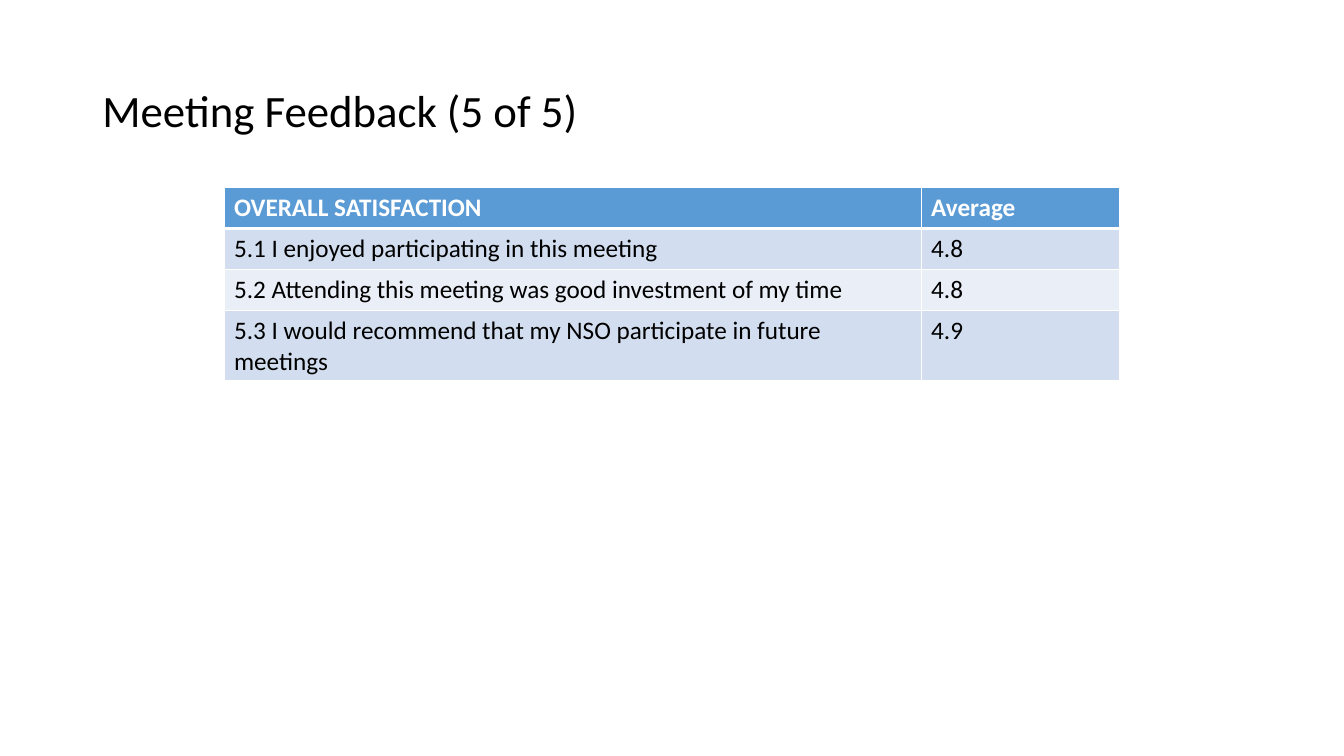
from dataclasses import dataclass

from lxml.etree import SubElement
from pptx import Presentation
from pptx.dml.color import RGBColor
from pptx.enum.text import MSO_ANCHOR
from pptx.oxml.ns import qn
from pptx.util import Pt

BLACK = RGBColor(0x00, 0x00, 0x00)
WHITE = RGBColor(0xFF, 0xFF, 0xFF)
BLUE = RGBColor(0x5B, 0x9B, 0xD5)
MIST = RGBColor(0xD2, 0xDE, 0xEF)
PALE = RGBColor(0xEA, 0xEF, 0xF7)
FONT = "Calibri"
WIDTHS = (498, 142)


@dataclass
class Row:
    topic: str
    score: str
    fill: RGBColor
    high: float = 29.2
    ink: RGBColor = BLACK
    bold: bool = False
    top: float = 1
    base: float = 1


ROWS = [
    Row("OVERALL SATISFACTION", "Average", BLUE, ink=WHITE, bold=True, base=3),
    Row("5.1 I enjoyed participating in this meeting", "4.8", MIST, top=3),
    Row("5.2 Attending this meeting was good investment of my time", "4.8", PALE),
    Row("5.3 I would recommend that my NSO participate in future meetings",
        "4.9", MIST, high=50.4),
]


def add_text(para, text: str, size: float, ink: RGBColor, bold: bool = False) -> None:
    run = para.add_run()
    run.text = text
    font = run.font
    font.name, font.size, font.bold = FONT, Pt(size), bold
    font.color.rgb = ink


def add_edge(cell, side: str, width: float) -> None:
    line = SubElement(cell._tc.get_or_add_tcPr(), qn(f"a:ln{side}"), w=str(Pt(width)))
    fill = SubElement(line, qn("a:solidFill"))
    SubElement(fill, qn("a:srgbClr"), val=str(WHITE))


def draw_cell(cell, text: str, row: Row) -> None:
    for side, width in (("L", 1), ("R", 1), ("T", row.top), ("B", row.base)):
        add_edge(cell, side, width)
    cell.fill.solid()
    cell.fill.fore_color.rgb = row.fill
    add_text(cell.text_frame.paragraphs[0], text, 18, row.ink, row.bold)


def draw_title(slide, text: str) -> None:
    box = slide.shapes.add_textbox(Pt(66), Pt(28.8), Pt(828), Pt(104.4))
    frame = box.text_frame
    frame.word_wrap = True
    frame.vertical_anchor = MSO_ANCHOR.MIDDLE
    para = frame.paragraphs[0]
    para.line_spacing = 0.9
    add_text(para, text, 32, BLACK)


def draw_table(slide, rows: list[Row]) -> None:
    high = sum(row.high for row in rows)
    table = slide.shapes.add_table(
        len(rows), len(WIDTHS), Pt(160), Pt(134), Pt(sum(WIDTHS)), Pt(high)).table
    for col, width in zip(table.columns, WIDTHS):
        col.width = Pt(width)
    for line, row in zip(table.rows, rows):
        line.height = Pt(row.high)
        for cell, text in zip(line.cells, (row.topic, row.score)):
            draw_cell(cell, text, row)


def main() -> None:
    deck = Presentation()
    deck.slide_width, deck.slide_height = Pt(960), Pt(540)
    slide = deck.slides.add_slide(deck.slide_layouts[6])
    draw_title(slide, "Meeting Feedback (5 of 5)")
    draw_table(slide, ROWS)
    deck.save("out.pptx")


if __name__ == "__main__":
    main()
